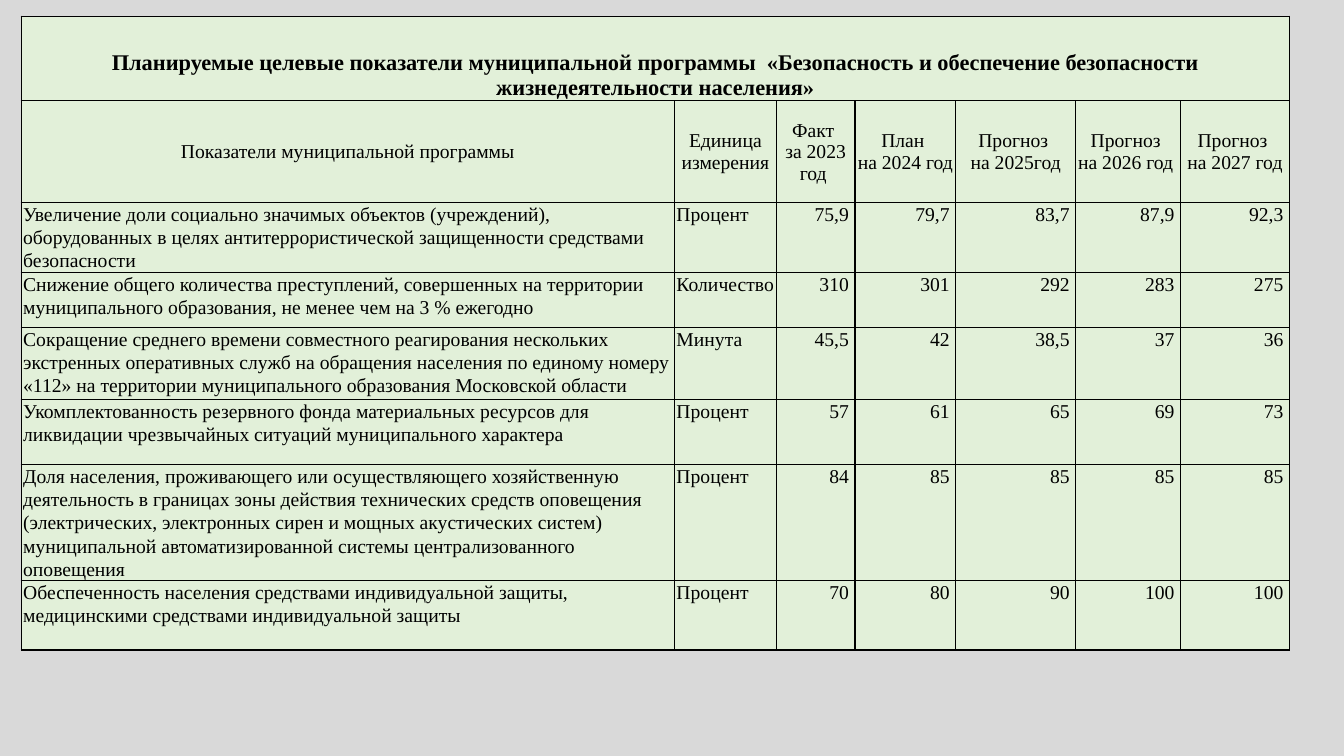
import lxml.etree
import pptx
import pptx.dml.color
import pptx.enum.text
import pptx.oxml.ns
import pptx.util

Inches = pptx.util.Inches
RGBColor = pptx.dml.color.RGBColor
ALIGN = pptx.enum.text.PP_ALIGN
ANCHOR = pptx.enum.text.MSO_ANCHOR
COLORS = {"background": "D9D9D9", "cell": "E2F0D9", "ink": "000000"}

TITLE = ("Планируемые целевые показатели муниципальной программы  "
         "«Безопасность и обеспечение безопасности жизнедеятельности населения»")
HEADERS = ["Показатели муниципальной программы", "Единица измерения",
           "Факт \nза 2023 год ", "План \nна 2024 год ", "Прогноз \n на 2025год ",
           "Прогноз \nна 2026 год ", "Прогноз \n на 2027 год "]
INDICATORS = [
    ["Увеличение доли социально значимых объектов (учреждений), оборудованных в целях "
     "антитеррористической защищенности средствами безопасности",
     "Процент", "75,9", "79,7", "83,7", "87,9", "92,3"],
    ["Снижение общего количества преступлений, совершенных на территории "
     "муниципального образования, не менее чем на 3 % ежегодно",
     "Количество", "310", "301", "292", "283", "275"],
    ["Сокращение среднего времени совместного реагирования нескольких экстренных "
     "оперативных служб на обращения населения по единому номеру «112» на территории "
     "муниципального образования Московской области",
     "Минута", "45,5", "42", "38,5", "37", "36"],
    ["Укомплектованность резервного фонда материальных ресурсов для ликвидации "
     "чрезвычайных ситуаций муниципального характера",
     "Процент", "57", "61", "65", "69", "73"],
    ["Доля населения, проживающего или осуществляющего хозяйственную деятельность в "
     "границах зоны действия технических средств оповещения (электрических, электронных "
     "сирен и мощных акустических систем) муниципальной автоматизированной системы "
     "централизованного  оповещения",
     "Процент", "84", "85", "85", "85", "85"],
    ["Обеспеченность населения средствами индивидуальной защиты, медицинскими "
     "средствами индивидуальной защиты",
     "Процент", "70", "80", "90", "100", "100"],
]
COLUMN_WIDTHS = [6.48, 1.01, 0.78, 1, 1.19, 1.04, 1.08]
ROW_HEIGHTS = [0.84, 1.01, 0.63, 0.55, 0.71, 0.65, 0.99, 0.69]


def add_borders(cell):
    properties = cell._tc.get_or_add_tcPr()
    for position, side in enumerate(("lnL", "lnR", "lnT", "lnB")):
        line = lxml.etree.Element(pptx.oxml.ns.qn(f"a:{side}"), w=str(pptx.util.Pt(1)))
        fill = lxml.etree.SubElement(line, pptx.oxml.ns.qn("a:solidFill"))
        lxml.etree.SubElement(fill, pptx.oxml.ns.qn("a:srgbClr"), val=COLORS["ink"])
        properties.insert(position, line)


# Slide and background
presentation = pptx.Presentation()
presentation.slide_width = Inches(13.33)
presentation.slide_height = Inches(7.5)
slide = presentation.slides.add_slide(presentation.slide_layouts[6])
slide.background.fill.solid()
slide.background.fill.fore_color.rgb = RGBColor.from_string(COLORS["background"])

# Table grid
table = slide.shapes.add_table(
    len(ROW_HEIGHTS), len(COLUMN_WIDTHS), Inches(0.21), Inches(0.16),
    Inches(sum(COLUMN_WIDTHS)), Inches(sum(ROW_HEIGHTS))).table
for column, width in zip(table.columns, COLUMN_WIDTHS):
    column.width = Inches(width)
for row, height in zip(table.rows, ROW_HEIGHTS):
    row.height = Inches(height)
table.cell(0, 0).merge(table.cell(0, len(COLUMN_WIDTHS) - 1))

# Cell text and formatting
title_row = [TITLE] + [""] * (len(COLUMN_WIDTHS) - 1)
for row_index, texts in enumerate([title_row, HEADERS] + INDICATORS):
    for column_index, text in enumerate(texts):
        cell = table.cell(row_index, column_index)
        cell.fill.solid()
        cell.fill.fore_color.rgb = RGBColor.from_string(COLORS["cell"])
        add_borders(cell)
        cell.margin_top = cell.margin_bottom = 0
        if row_index < 2:
            cell.margin_left = cell.margin_right = cell.margin_top = Inches(0.01)
            cell.vertical_anchor = ANCHOR.MIDDLE if row_index else ANCHOR.BOTTOM
            alignment = ALIGN.CENTER
        elif column_index < 2:
            cell.margin_left, cell.margin_right = Inches(0.02), 0
            alignment = ALIGN.LEFT
        else:
            cell.margin_left, cell.margin_right = 0, Inches(0.06)
            alignment = ALIGN.RIGHT
        if cell.is_spanned:
            continue
        cell.text = text
        for paragraph in cell.text_frame.paragraphs:
            paragraph.alignment = alignment
            if row_index >= 2:
                paragraph.line_spacing = 1.07
            paragraph.font.name = "Times New Roman"
            paragraph.font.size = pptx.util.Pt(14 if row_index else 16)
            paragraph.font.bold = row_index == 0
            paragraph.font.color.rgb = RGBColor.from_string(COLORS["ink"])

presentation.save("out.pptx")
